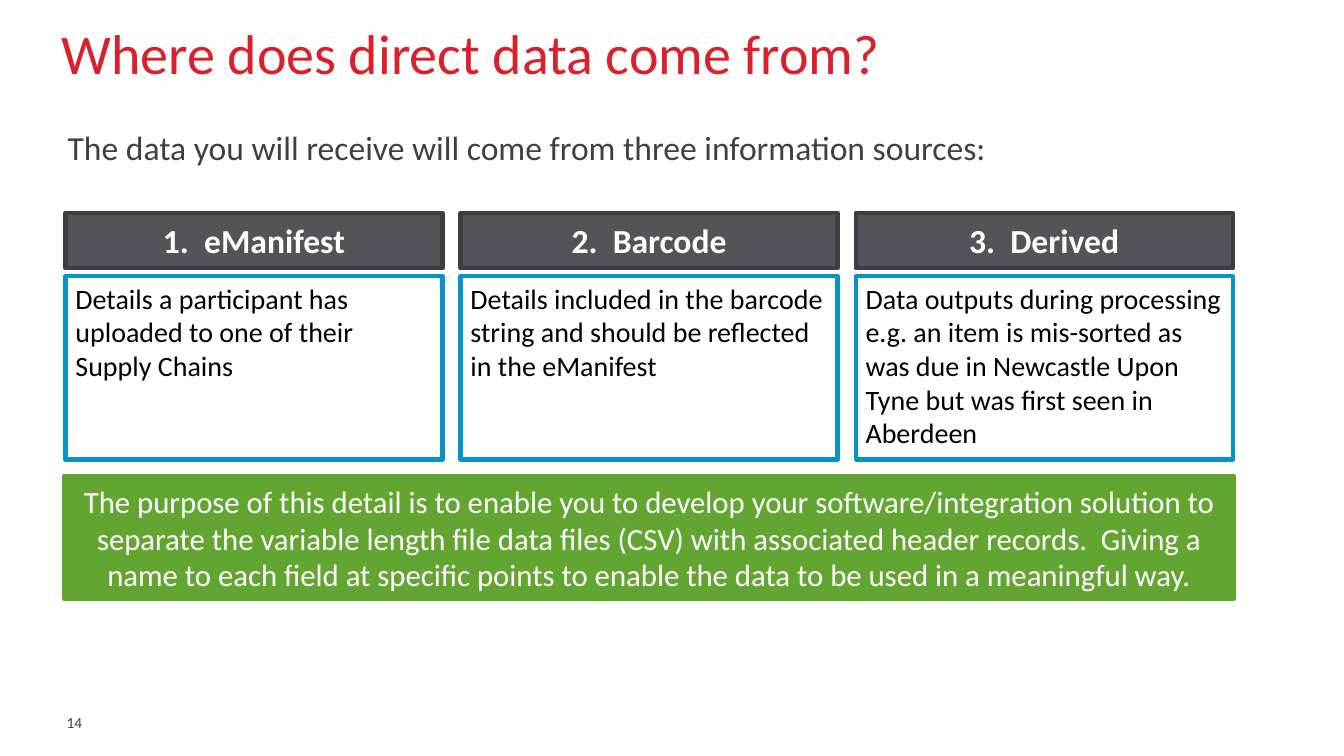
from pptx import Presentation, util as u
from pptx.dml import color
from pptx.enum import shapes, text


def rgb(value):
    return color.RGBColor.from_string(value)


def write(shape, content, size, ink, bold=False, align=text.PP_ALIGN.LEFT,
          anchor=text.MSO_ANCHOR.TOP, inset=(7.2, 3.6), line_spacing=None,
          font="Calibri"):
    frame = shape.text_frame
    frame.word_wrap = True
    frame.auto_size = text.MSO_AUTO_SIZE.NONE
    frame.vertical_anchor = anchor
    frame.margin_left = frame.margin_right = u.Pt(inset[0])
    frame.margin_top = frame.margin_bottom = u.Pt(inset[1])
    paragraph = frame.paragraphs[0]
    paragraph.alignment = align
    if line_spacing is not None:
        paragraph.line_spacing = line_spacing
    run = paragraph.add_run()
    run.text = content
    run.font.name = font
    run.font.size = u.Pt(size)
    run.font.bold = bold
    run.font.color.rgb = rgb(ink)


class SlideBuilder:
    RED = "DA202A"
    GREY = "404040"
    WHITE = "FFFFFF"
    BLACK = "000000"
    SLATE = "53535A"
    SLATE_EDGE = "3D3D43"
    BLUE = "0892CB"
    GREEN = "62A531"

    def __init__(self, presentation):
        self.slide = presentation.slides.add_slide(presentation.slide_layouts[5])

    def title(self, content, left, top, width, height):
        shape = self.slide.shapes.title
        shape.left, shape.top = u.Pt(left), u.Pt(top)
        shape.width, shape.height = u.Pt(width), u.Pt(height)
        write(shape, content, 40, self.RED, inset=(0, 0), line_spacing=0.8)

    def label(self, content, left, top, width, height, size, **style):
        shape = self.slide.shapes.add_textbox(
            u.Pt(left), u.Pt(top), u.Pt(width), u.Pt(height))
        write(shape, content, size, self.GREY, inset=(0, 0), **style)

    def box(self, content, left, top, width, height, size, ink, edge,
            edge_width=3, fill=None, **style):
        shape = self.slide.shapes.add_shape(
            shapes.MSO_SHAPE.RECTANGLE,
            u.Pt(left), u.Pt(top), u.Pt(width), u.Pt(height))
        shape.shadow.inherit = False
        if fill:
            shape.fill.solid()
            shape.fill.fore_color.rgb = rgb(fill)
        else:
            shape.fill.background()
        shape.line.color.rgb = rgb(edge)
        shape.line.width = u.Pt(edge_width)
        write(shape, content, size, ink, **style)

    def banner(self, content, left, top, width, height, size, fill, edge,
               edge_width=3, bold=False):
        self.box(content, left, top, width, height, size, self.WHITE, edge,
                 edge_width, fill, bold=bold, align=text.PP_ALIGN.CENTER,
                 anchor=text.MSO_ANCHOR.MIDDLE)

    def source(self, heading, details, left, width):
        self.banner(heading, left, 152, width, 39.6, 24,
                    self.SLATE, self.SLATE_EDGE, bold=True)
        self.box(details, left, 197.3, width, 131, 20, self.BLACK, self.BLUE)


SOURCES = [
    ("1.  eManifest",
     "Details a participant has uploaded to one of their Supply Chains"),
    ("2.  Barcode",
     "Details included in the barcode string and should be reflected "
     "in the eManifest"),
    ("3.  Derived",
     "Data outputs during processing e.g. an item is mis-sorted as was due in "
     "Newcastle Upon Tyne but was first seen in Aberdeen"),
]
PURPOSE = (
    "The purpose of this detail is to enable you to develop your "
    "software/integration solution to separate the variable length file data "
    "files (CSV) with associated header records.  Giving a name to each field "
    "at specific points to enable the data to be used in a meaningful way."
)


def main():
    presentation = Presentation()
    presentation.slide_width = u.Pt(960)
    presentation.slide_height = u.Pt(540)
    builder = SlideBuilder(presentation)
    builder.title("Where does direct data come from?", 44, 22.3, 872, 79.2)
    builder.label(
        "The data you will receive will come from three information sources:",
        48.3, 91, 868, 47.5, 24)
    builder.label("14", 47.5, 512.6, 21, 10.8, 11, line_spacing=u.Pt(10))
    column_width, column_gap = 269.3, 12.9
    for index, (heading, details) in enumerate(SOURCES):
        left = 46.8 + index * (column_width + column_gap)
        builder.source(heading, details, left, column_width)
    builder.banner(PURPOSE, 45.4, 339.8, 836.6, 88.6, 22,
                   builder.GREEN, builder.GREEN, edge_width=2)
    presentation.save("out.pptx")


if __name__ == "__main__":
    main()
